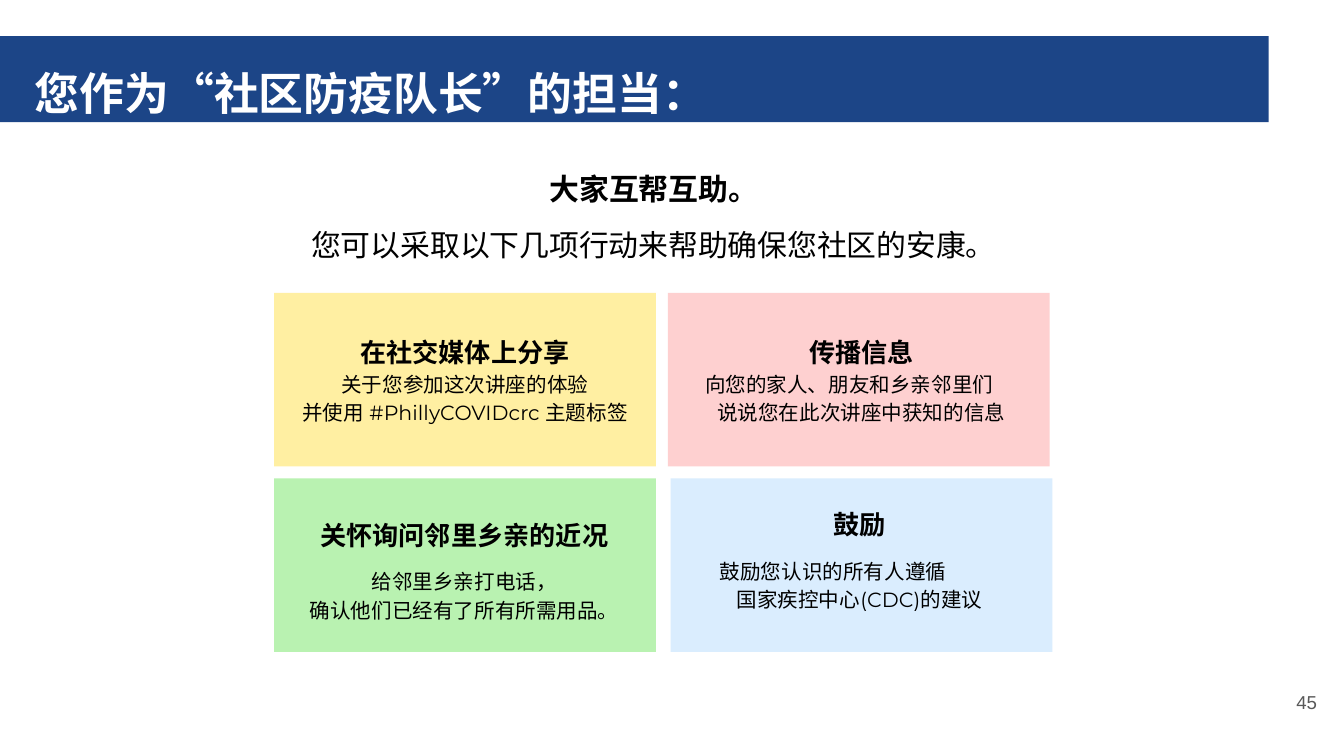
from dataclasses import dataclass

import lxml.etree
import pptx
import pptx.dml.color
import pptx.enum.lang
import pptx.enum.shapes
import pptx.enum.text
import pptx.oxml.ns
import pptx.shapes.autoshape
import pptx.slide
import pptx.util

PX = 4572
RGBColor = pptx.dml.color.RGBColor
WHITE = RGBColor(0xFF, 0xFF, 0xFF)
BLACK = RGBColor(0x00, 0x00, 0x00)
GREY = RGBColor(0x59, 0x59, 0x59)
NAVY = RGBColor(0x1C, 0x45, 0x87)
YELLOW = RGBColor(0xFF, 0xEF, 0xA2)
PINK = RGBColor(0xFE, 0xD0, 0xD0)
GREEN = RGBColor(0xB9, 0xF2, 0xB1)
BLUE = RGBColor(0xDA, 0xED, 0xFE)

LEFT = pptx.enum.text.PP_ALIGN.LEFT
CENTER = pptx.enum.text.PP_ALIGN.CENTER
RIGHT = pptx.enum.text.PP_ALIGN.RIGHT
CARD_WIDTH, CARD_HEIGHT = 568, 258


@dataclass(frozen=True)
class Area:
    left: int
    top: int
    width: int
    height: int

    def emu(self) -> tuple[int, ...]:
        return tuple(v * PX for v in (self.left, self.top, self.width, self.height))


@dataclass(frozen=True)
class Line:
    text: str
    size: int
    bold: bool = False
    font: str = "Montserrat"
    color: RGBColor = BLACK
    align: int = CENTER
    spacing: float = 1.15
    before: int = 0
    right_indent: int = 0
    east_asian: bool = True


@dataclass(frozen=True)
class Card:
    left: int
    top: int
    fill: RGBColor
    text_area: Area
    lines: tuple[Line, ...]


CARDS = (
    Card(408, 436, YELLOW, Area(430, 486, 524, 224), (
        Line("在社交媒体上分享", 14, True),
        Line("关于您参加这次讲座的体验", 11),
        Line("并使用 #PhillyCOVIDcrc 主题标签", 11),
    )),
    Card(994, 436, PINK, Area(1028, 486, 508, 182), (
        Line("传播信息", 14, True),
        Line("向您的家人、朋友和乡亲邻里们", 11, right_indent=36),
        Line("说说您在此次讲座中获知的信息", 11),
    )),
    Card(408, 712, GREEN, Area(422, 758, 538, 224), (
        Line("关怀询问邻里乡亲的近况", 14, True),
        Line("给邻里乡亲打电话，", 11, before=8),
        Line("确认他们已经有了所有所需用品。", 11),
    )),
    Card(998, 712, BLUE, Area(1052, 742, 454, 192), (
        Line("鼓励", 14, True, "Open Sans"),
        Line("鼓励您认识的所有人遵循", 11, before=8, right_indent=78),
        Line("国家疾控中心(CDC)的建议", 11),
    )),
)


def place(box: pptx.shapes.autoshape.Shape, area: Area) -> None:
    box.left, box.top, box.width, box.height = area.emu()


def write_lines(box: pptx.shapes.autoshape.Shape, lines: tuple[Line, ...],
                inset_x: int = 14, inset_y: int = 8) -> None:
    frame = box.text_frame
    frame.word_wrap = True
    frame.auto_size = pptx.enum.text.MSO_AUTO_SIZE.NONE
    frame.vertical_anchor = pptx.enum.text.MSO_ANCHOR.TOP
    frame.margin_left = frame.margin_right = inset_x * PX
    frame.margin_top = frame.margin_bottom = inset_y * PX
    for index, line in enumerate(lines):
        para = frame.add_paragraph() if index else frame.paragraphs[0]
        para.alignment = line.align
        para.line_spacing = line.spacing
        para.space_before = pptx.util.Pt(line.before)
        para.space_after = pptx.util.Pt(0)
        properties = para._p.get_or_add_pPr()
        properties.set("marL", "0")
        properties.set("marR", str(line.right_indent * PX))
        properties.set("indent", "0")
        lxml.etree.SubElement(properties, pptx.oxml.ns.qn("a:buNone"))
        span = para.add_run()
        span.text = line.text
        span.font.size = pptx.util.Pt(line.size)
        span.font.bold = line.bold
        span.font.color.rgb = line.color
        span.font.name = line.font
        span.font.language_id = pptx.enum.lang.MSO_LANGUAGE_ID.SIMPLIFIED_CHINESE
        if line.east_asian:
            face = lxml.etree.Element(pptx.oxml.ns.qn("a:ea"), typeface=line.font)
            span.font._element.find(pptx.oxml.ns.qn("a:latin")).addnext(face)


def add_panel(page: pptx.slide.Slide, area: Area,
              fill: RGBColor) -> pptx.shapes.autoshape.Shape:
    panel = page.shapes.add_shape(pptx.enum.shapes.MSO_SHAPE.RECTANGLE, *area.emu())
    panel.shadow.inherit = False
    panel.fill.solid()
    panel.fill.fore_color.rgb = fill
    panel.line.fill.background()
    return panel


def add_text(page: pptx.slide.Slide, area: Area, lines: tuple[Line, ...]) -> None:
    write_lines(page.shapes.add_textbox(*area.emu()), lines)


def main() -> None:
    deck = pptx.Presentation()
    deck.slide_width, deck.slide_height = 2000 * PX, 1125 * PX
    page = deck.slides.add_slide(deck.slide_layouts[1])
    title, intro = page.shapes.title, page.placeholders[1]

    banner = add_panel(page, Area(0, 54, 1888, 128), NAVY)
    title.element.addprevious(banner.element)
    place(title, Area(32, 66, 1914, 78))
    write_lines(title, (
        Line("您作为“社区防疫队长”的担当：", 24, True, color=WHITE, align=LEFT,
             east_asian=False),
    ), 20, 20)

    place(intro, Area(56, 238, 1834, 140))
    write_lines(intro, (
        Line("大家互帮互助。", 16, True),
        Line("您可以采取以下几项行动来帮助确保您社区的安康。", 16, before=8),
    ))

    for card in CARDS:
        add_panel(page, Area(card.left, card.top, CARD_WIDTH, CARD_HEIGHT), card.fill)
        add_text(page, card.text_area, card.lines)

    add_text(page, Area(1854, 1020, 120, 86), (
        Line("45", 10, font="Arial", color=GREY, align=RIGHT, spacing=1.0),
    ))
    deck.save("out.pptx")


if __name__ == "__main__":
    main()
